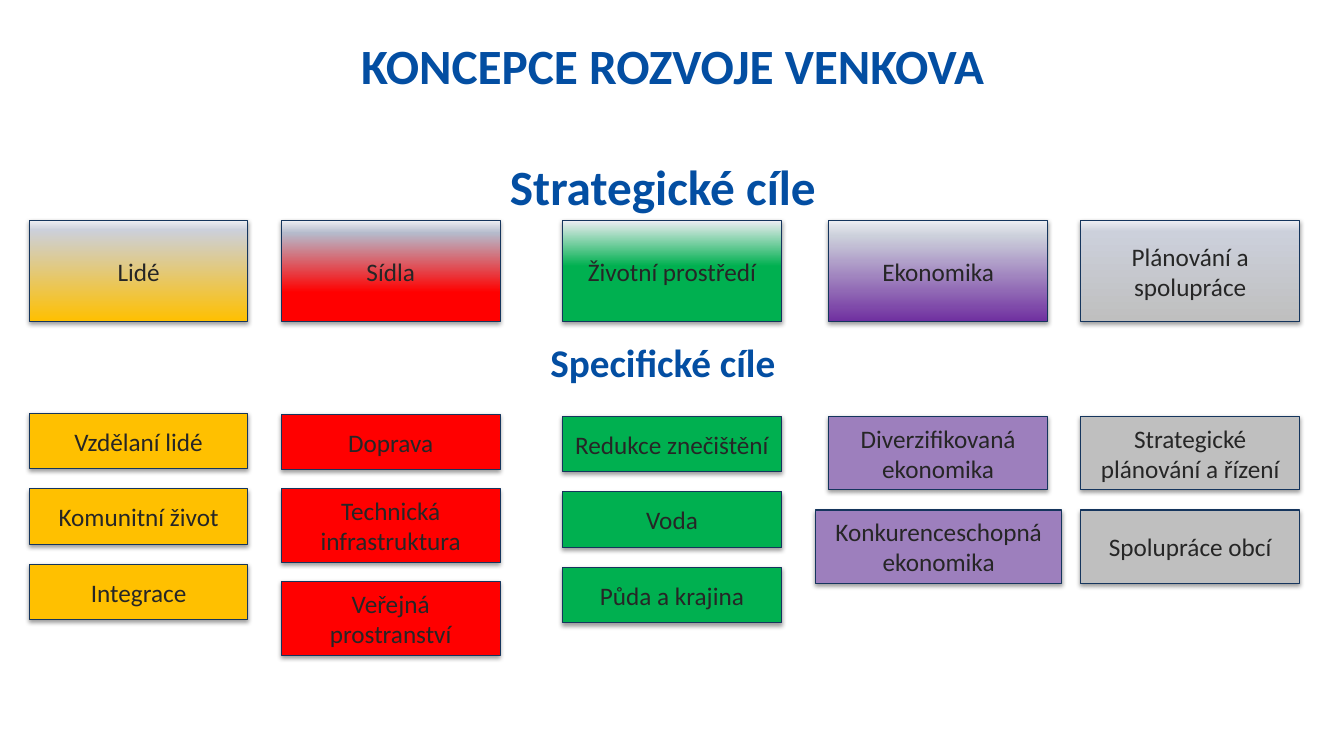
"""Build the rural development concept slide."""
from dataclasses import dataclass

from lxml import etree
from pptx import Presentation
from pptx import util as u
from pptx.dml.color import RGBColor
from pptx.enum import shapes, text
from pptx.oxml import ns

PX = 9144


@dataclass(frozen=True)
class Theme:
    """Hold the colours and type sizes of the slide."""
    font: str = "Calibri"
    heading: str = "034EA2"
    ink: str = "262626"
    outline: str = "15355D"
    shadow: str = "000000"
    amber: str = "FFC000"
    red: str = "FF0000"
    green: str = "00B050"
    purple: str = "7030A0"
    lilac: str = "9D7FBD"
    grey: str = "BFBFBF"
    mist: str = "CCD0DB"
    steel: str = "B5BBCC"
    pale: str = "ECEDF2"
    title_size: float = 35.2
    subtitle_size: float = 28
    box_size: float = 18


THEME = Theme()
BOX_WIDTH, GOAL_TOP, GOAL_HEIGHT = 217, 219, 100
LOW, HIGH = 55, 73


@dataclass(frozen=True)
class Column:
    """Describe a strategic goal and the specific goals stacked under it."""
    goal: str
    left: int
    stops: tuple
    fill: str
    top: int
    gap: int
    targets: tuple


COLUMNS = (
    Column("Lidé", 29, ((0, THEME.amber), (91, THEME.mist), (100, THEME.pale)),
           THEME.amber, 410, 20,
           (("Vzdělaní lidé", LOW), ("Komunitní život", LOW), ("Integrace", LOW))),
    Column("Sídla", 279, ((29, THEME.red), (88, THEME.steel), (100, THEME.pale)),
           THEME.red, 411, 19,
           (("Doprava", LOW), ("Technická infrastruktura", HIGH),
            ("Veřejná prostranství", HIGH))),
    Column("Životní prostředí", 558, ((55, THEME.green), (100, THEME.pale)),
           THEME.green, 413, 20,
           (("Redukce znečištění", LOW), ("Voda", LOW), ("Půda a krajina", LOW))),
    Column("Ekonomika", 822, ((0, THEME.purple), (85, THEME.mist), (100, THEME.pale)),
           THEME.lilac, 413, 20,
           (("Diverzifikovaná ekonomika", HIGH), ("Konkurenceschopná ekonomika", HIGH))),
    Column("Plánování a spolupráce", 1072,
           ((0, THEME.grey), (89, THEME.mist), (100, THEME.pale)),
           THEME.grey, 413, 20,
           (("Strategické plánování a řízení", HIGH), ("Spolupráce obcí", HIGH))),
)
WIDE_TARGETS = {"Konkurenceschopná ekonomika": 244}


def place(*lengths):
    """Turn px lengths into EMU."""
    return [u.Emu(length * PX) for length in lengths]


def add_element(parent, tag, **attributes):
    """Append a DrawingML element to its parent."""
    element = etree.SubElement(parent, ns.qn(tag))
    for name, value in attributes.items():
        element.set(name, str(value))
    return element


def write(frame, words, size, color, bold=False, align=text.PP_ALIGN.CENTER):
    """Fill a text frame with one formatted paragraph."""
    frame.text = words
    paragraph = frame.paragraphs[0]
    paragraph.alignment = align
    font = paragraph.runs[0].font
    font.name, font.size, font.bold = THEME.font, u.Pt(size), bold
    font.color.rgb = RGBColor.from_string(color)


def add_shadow(shape):
    """Give a shape a soft shadow straight below it."""
    shape.shadow.inherit = False
    effects = shape.element.spPr.find(ns.qn("a:effectLst"))
    shadow = add_element(effects, "a:outerShdw", blurRad=40000, dist=20000,
                         dir=5400000, rotWithShape=0)
    color = add_element(shadow, "a:srgbClr", val=THEME.shadow)
    add_element(color, "a:alpha", val=38000)


def fill_gradient(shape, stops):
    """Fill a shape with colour stops rising from bottom to top."""
    shape.fill.gradient()
    shape.fill.gradient_angle = 90
    stop_list = shape.element.spPr.find(".//" + ns.qn("a:gsLst"))
    for old_stop in list(stop_list):
        stop_list.remove(old_stop)
    for percent, color in stops:
        stop = add_element(stop_list, "a:gs", pos=percent * 1000)
        add_element(stop, "a:srgbClr", val=color)


def add_box(slide, words, left, top, width, height):
    """Add an outlined, shadowed rectangle with centred text."""
    shape = slide.shapes.add_shape(shapes.MSO_SHAPE.RECTANGLE,
                                   *place(left, top, width, height))
    shape.line.color.rgb = RGBColor.from_string(THEME.outline)
    shape.line.width = u.Pt(0.75)
    add_shadow(shape)
    frame = shape.text_frame
    frame.word_wrap = True
    frame.vertical_anchor = text.MSO_ANCHOR.MIDDLE
    write(frame, words, THEME.box_size, THEME.ink)
    return shape


def add_heading(slide, words, left, top, width, height, size):
    """Add a bold heading that keeps to one line."""
    frame = slide.shapes.add_textbox(*place(left, top, width, height)).text_frame
    frame.word_wrap = False
    frame.auto_size = text.MSO_AUTO_SIZE.SHAPE_TO_FIT_TEXT
    write(frame, words, size, THEME.heading, True, text.PP_ALIGN.LEFT)


def add_title(slide, words):
    """Add the centred slide title."""
    frame = slide.shapes.add_textbox(*place(67, 30, 1200, 99)).text_frame
    frame.word_wrap = True
    write(frame, words, THEME.title_size, THEME.heading, True)


def add_column(slide, column):
    """Add a strategic goal and its stack of specific goals."""
    goal = add_box(slide, column.goal, column.left, GOAL_TOP, BOX_WIDTH, GOAL_HEIGHT)
    fill_gradient(goal, column.stops)
    top = column.top
    for words, height in column.targets:
        width = WIDE_TARGETS.get(words, BOX_WIDTH)
        left = column.left - (width - BOX_WIDTH) // 2
        target = add_box(slide, words, left, top, width, height)
        target.fill.solid()
        target.fill.fore_color.rgb = RGBColor.from_string(column.fill)
        top += height + column.gap


def main():
    """Build and save the slide."""
    presentation = Presentation()
    presentation.slide_width, presentation.slide_height = place(1333, 750)
    slide = presentation.slides.add_slide(presentation.slide_layouts[6])
    add_title(slide, "KONCEPCE ROZVOJE VENKOVA")
    add_heading(slide, "Strategické cíle", 496, 150, 327, 69, THEME.title_size)
    add_heading(slide, "Specifické cíle", 536, 331, 246, 57, THEME.subtitle_size)
    for column in COLUMNS:
        add_column(slide, column)
    presentation.save("out.pptx")


if __name__ == "__main__":
    main()
